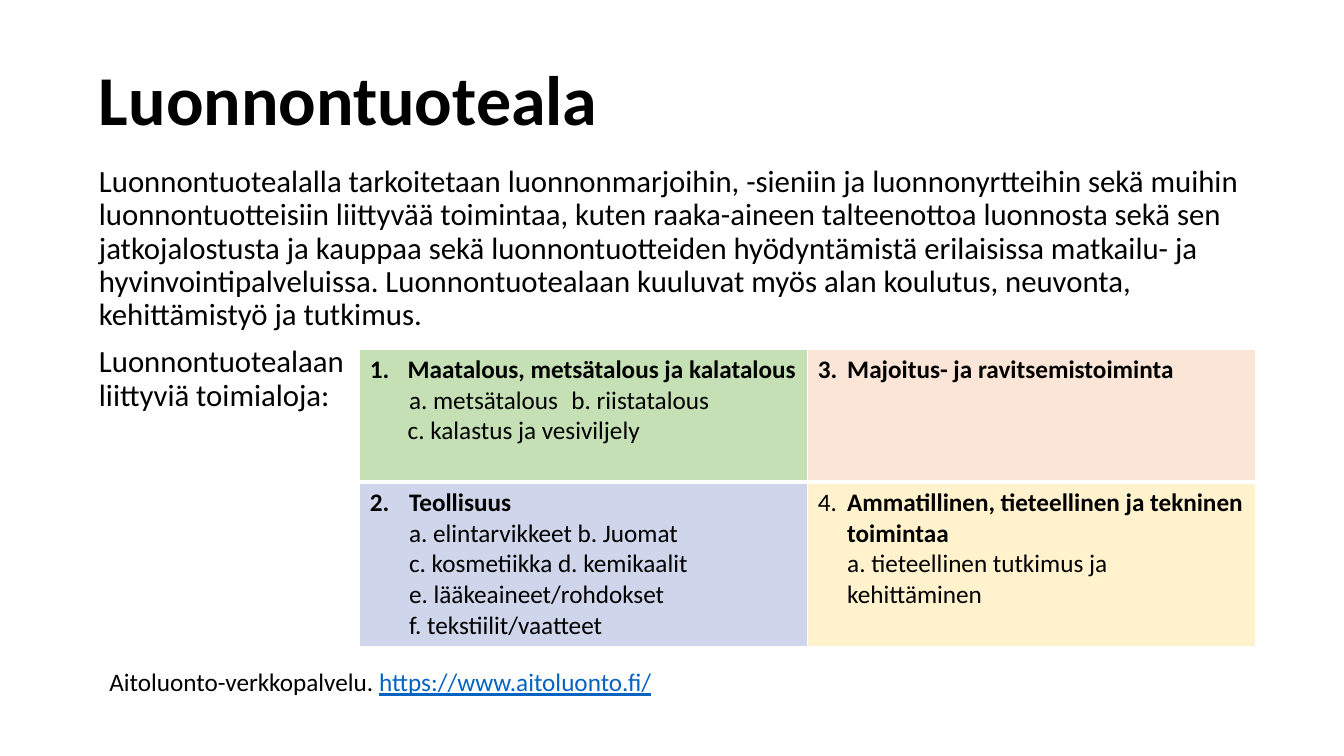
from lxml.etree import SubElement
from pptx import Presentation
from pptx.dml.color import RGBColor
from pptx.enum.text import MSO_ANCHOR, MSO_AUTO_SIZE, PP_ALIGN
from pptx.oxml.ns import qn
from pptx.util import Pt


def paint(font, color):
    font.color.rgb = RGBColor.from_string(color)


class Deck:
    face = "Calibri"
    ink = "000000"
    link = "0563C1"
    rim = "FFFFFF"

    def __init__(self, wide, high):
        self.prs = Presentation()
        self.prs.slide_width, self.prs.slide_height = Pt(wide), Pt(high)
        self.slide = self.prs.slides.add_slide(self.prs.slide_layouts[1])

    def place(self, shape, box):
        shape.left, shape.top, shape.width, shape.height = map(Pt, box)
        frame = shape.text_frame
        frame.word_wrap = True
        frame.auto_size = MSO_AUTO_SIZE.NONE
        return frame

    def run(self, para, text, size, bold=False, url=False):
        for i, line in enumerate(text.split("\n")):
            if i:
                para.add_line_break()
            if not line:
                continue
            run = para.add_run()
            run.text = line
            font = run.font
            font.name, font.size, font.bold = self.face, Pt(size), bold
            font.underline = url
            paint(font, self.link if url else self.ink)

    def para(self, frame, first, left=0, hang=0, mark=None, start=1):
        para = frame.paragraphs[0] if first else frame.add_paragraph()
        para.alignment = PP_ALIGN.LEFT
        props = para._p.get_or_add_pPr()
        props.set("marL", str(Pt(left)))
        props.set("indent", str(Pt(hang)))
        if mark:
            SubElement(props, qn("a:buAutoNum"), type=mark, startAt=str(start))
        else:
            SubElement(props, qn("a:buNone"))
        return para

    def title(self, text, box):
        frame = self.place(self.slide.shapes.title, box)
        frame.vertical_anchor = MSO_ANCHOR.MIDDLE
        para = self.para(frame, True)
        para.line_spacing = 0.9
        self.run(para, text, 50, True)

    def body(self, texts, box):
        frame = self.place(self.slide.placeholders[1], box)
        for i, text in enumerate(texts):
            para = self.para(frame, i == 0)
            para.line_spacing = 0.9
            para.space_before = Pt(10 if i else 0)
            self.run(para, text, 22)

    def note(self, parts, box):
        frame = self.place(self.slide.shapes.add_textbox(0, 0, 0, 0), box)
        para = self.para(frame, True)
        for text, url in parts:
            self.run(para, text, 18, url=url)

    def edge(self, cell, row):
        props = cell._tc.get_or_add_tcPr()
        inner = "B" if row == 0 else "T"
        for side in "LRTB":
            width = Pt(3 if side == inner else 1)
            line = SubElement(props, qn("a:ln" + side), w=str(width))
            fill = SubElement(line, qn("a:solidFill"))
            SubElement(fill, qn("a:srgbClr"), val=self.rim)

    def table(self, cells, box, highs):
        rows, cols = len(cells), len(cells[0])
        grid = self.slide.shapes.add_table(rows, cols, *map(Pt, box)).table
        grid.first_row = grid.horz_banding = False
        for col in grid.columns:
            col.width = Pt(box[2] / cols)
        for r, high in enumerate(highs):
            grid.rows[r].height = Pt(high)
            for c, (color, paras) in enumerate(cells[r]):
                cell = grid.cell(r, c)
                self.edge(cell, r)
                cell.fill.solid()
                cell.fill.fore_color.rgb = RGBColor.from_string(color)
                for i, (style, runs) in enumerate(paras):
                    para = self.para(cell.text_frame, i == 0, **style)
                    for text, bold in runs:
                        self.run(para, text, 18, bold)


def main():
    deck = Deck(960, 540)
    deck.title("Luonnontuoteala", (63.5, 42.5, 829, 62.5))
    deck.body([
        "Luonnontuotealalla tarkoitetaan luonnonmarjoihin, -sieniin ja "
        "luonnonyrtteihin sekä muihin luonnontuotteisiin liittyvää toimintaa, "
        "kuten raaka-aineen talteenottoa luonnosta sekä sen jatkojalostusta "
        "ja kauppaa sekä luonnontuotteiden hyödyntämistä erilaisissa "
        "matkailu- ja hyvinvointipalveluissa. Luonnontuotealaan kuuluvat "
        "myös alan koulutus, neuvonta, kehittämistyö ja tutkimus.",
        "Luonnontuotealaan\nliittyviä toimialoja:",
    ], (63.5, 115, 829, 310))

    num = "arabicPeriod"
    hung = dict(left=21, hang=-21)
    farm = [
        (dict(left=27, hang=-27, mark=num),
         [("Maatalous, metsätalous ja kalatalous", True)]),
        (dict(left=27, hang=1, mark="alphaLcPeriod"),
         [(" metsätalous\tb. riistatalous\nc. kalastus ja vesiviljely", False)]),
    ]
    stay = [(hung, [("3.\tMajoitus- ja ravitsemistoiminta", True)])]
    make = [
        (dict(left=28, hang=-28, mark=num, start=2),
         [("Teollisuus\n", True),
          ("a. elintarvikkeet b. Juomat\nc. kosmetiikka d. kemikaalit\n"
           "e. lääkeaineet/rohdokset\nf. tekstiilit/vaatteet", False)]),
    ]
    study = [
        (hung, [("4.\t", False),
                ("Ammatillinen, tieteellinen ja tekninen toimintaa", True)]),
        (dict(left=21),
         [("a. tieteellinen tutkimus ja kehittäminen", False)]),
    ]
    deck.table([
        [("C5E0B4", farm), ("FBE5D6", stay)],
        [("CFD5EA", make), ("FFF2CC", study)],
    ], (257, 249.5, 640, 211), (95, 116))

    deck.note([("Aitoluonto-verkkopalvelu. ", False),
               ("https://www.aitoluonto.fi/", True)], (71, 472.5, 419, 51))
    deck.prs.save("out.pptx")


if __name__ == "__main__":
    main()
